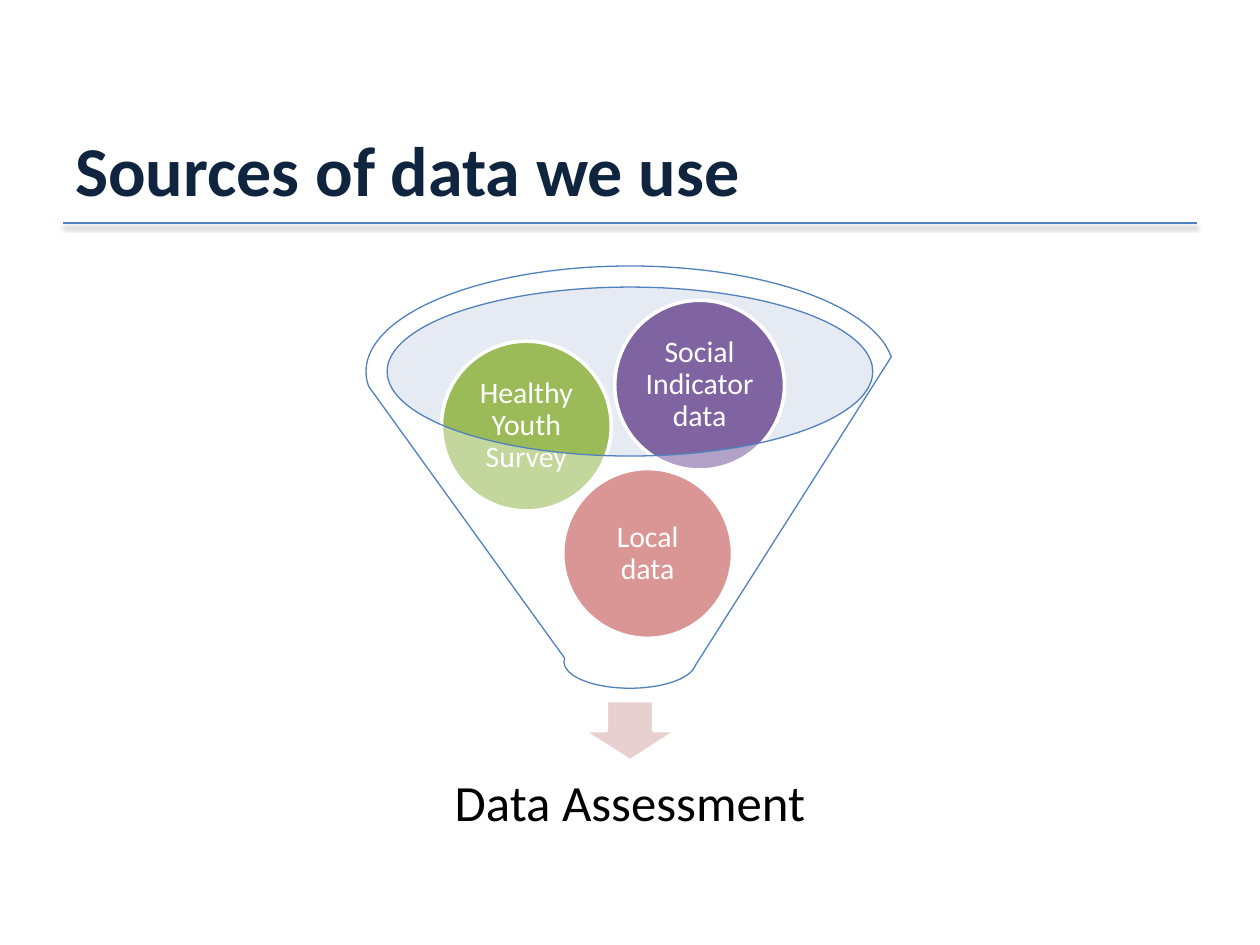
"""Builds a slide with a funnel that turns three data sources into an assessment."""
from lxml import etree
from pptx import Presentation
from pptx.dml.color import RGBColor as RGB
from pptx.enum.shapes import MSO_CONNECTOR as Link, MSO_SHAPE as Kind
from pptx.enum.text import MSO_ANCHOR as Anchor, PP_ALIGN as Align
from pptx.oxml import parse_xml
from pptx.oxml.ns import nsdecls, qn
from pptx.util import Pt

THEME = {
    "font": "Calibri",
    "title": {"size": 40, "color": "0F243E", "bold": True},
    "result": {"size": 29, "color": "000000", "bold": False},
    "ball": {"size": 17, "color": "FFFFFF", "bold": False},
    "line": "4F81BD", "white": "FFFFFF", "pool": "C2CDE1", "arrow": "E8D0D0",
    "red": "C0504D", "green": "9BBB59", "purple": "8064A2",
}


def write(shape, text, style, pad, align=Align.CENTER, space=0.9):
    """Puts one styled paragraph in a shape."""
    look = THEME[style]
    frame = shape.text_frame
    across, down = pad
    form = {"word_wrap": True, "vertical_anchor": Anchor.MIDDLE,
            "margin_left": Pt(across), "margin_right": Pt(across),
            "margin_top": Pt(down), "margin_bottom": Pt(down)}
    for name, value in form.items():
        setattr(frame, name, value)
    para = frame.paragraphs[0]
    para.alignment, para.line_spacing = align, space
    run = para.add_run()
    run.text = text
    form = {"name": THEME["font"], "size": Pt(look["size"]), "bold": look["bold"]}
    for name, value in form.items():
        setattr(run.font, name, value)
    run.font.color.rgb = RGB.from_string(look["color"])


def draw(kind, box, fill, line=None, width=2, alpha=None):
    """Adds a filled preset shape, with an outline if a line colour is given."""
    shape = shapes.add_shape(kind, *map(Pt, box))
    shape.shadow.inherit = False
    shape.fill.solid()
    shape.fill.fore_color.rgb = RGB.from_string(THEME[fill])
    if alpha:
        color = shape.fill._xPr.find(qn("a:solidFill"))[0]
        etree.SubElement(color, qn("a:alpha")).set("val", str(alpha * 1000))
    if line:
        shape.line.color.rgb = RGB.from_string(THEME[line])
        shape.line.width = Pt(width)
    else:
        shape.line.fill.background()
    return shape


deck = Presentation()
deck.slide_width, deck.slide_height = Pt(720), Pt(540)
shapes = deck.slides.add_slide(deck.slide_layouts[6]).shapes

rule = shapes.add_connector(Link.STRAIGHT, Pt(36), Pt(127.5), Pt(684), Pt(127.5))
rule.line.color.rgb = RGB.from_string(THEME["line"])
rule.line.width = Pt(1)
rule._element.spPr.append(parse_xml(
    f'<a:effectLst {nsdecls("a")}>'
    f'<a:outerShdw blurRad="{Pt(3.1)}" dist="{Pt(1.6)}" dir="5400000" rotWithShape="0">'
    '<a:srgbClr val="000000"><a:alpha val="38000"/></a:srgbClr>'
    '</a:outerShdw></a:effectLst>'))

title = shapes.add_textbox(Pt(36), Pt(66.2), Pt(587.5), Pt(59.8))
write(title, "Sources of data we use", "title", (7.2, 3.6), Align.LEFT, 1)

draw(Kind.OVAL, (221, 164.2, 278, 96.5), "pool", alpha=40)
draw(Kind.DOWN_ARROW, (333, 400.3, 54, 34.5), "arrow", "white")
result = shapes.add_textbox(Pt(230.8), Pt(427.9), Pt(258.5), Pt(64.6))
write(result, "Data Assessment", "result", (16.5, 16.5))

SIDE = 97
balls = [
    ("Local data", "red", 321.6, 267.8),
    ("Healthy Youth Survey", "green", 252.3, 195),
    ("Social Indicator data", "purple", 351.3, 171.6),
]
for text, fill, left, top in balls:
    ball = draw(Kind.OVAL, (left, top, SIDE, SIDE), fill, "white")
    write(ball, text, "ball", (1.5, 1.5))

draw(Kind.FUNNEL, (209.2, 152, 301.6, 241.3), "white", "line", 0.75, 40)

deck.save("out.pptx")
